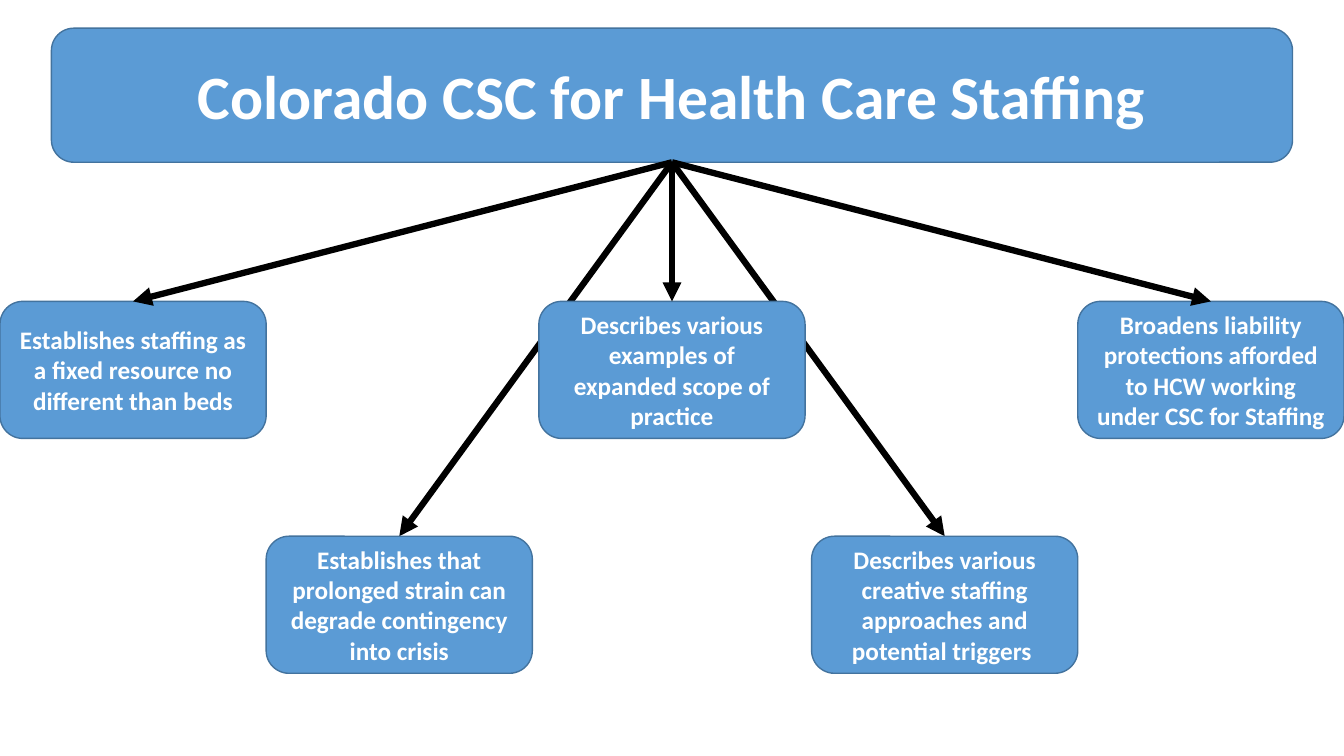
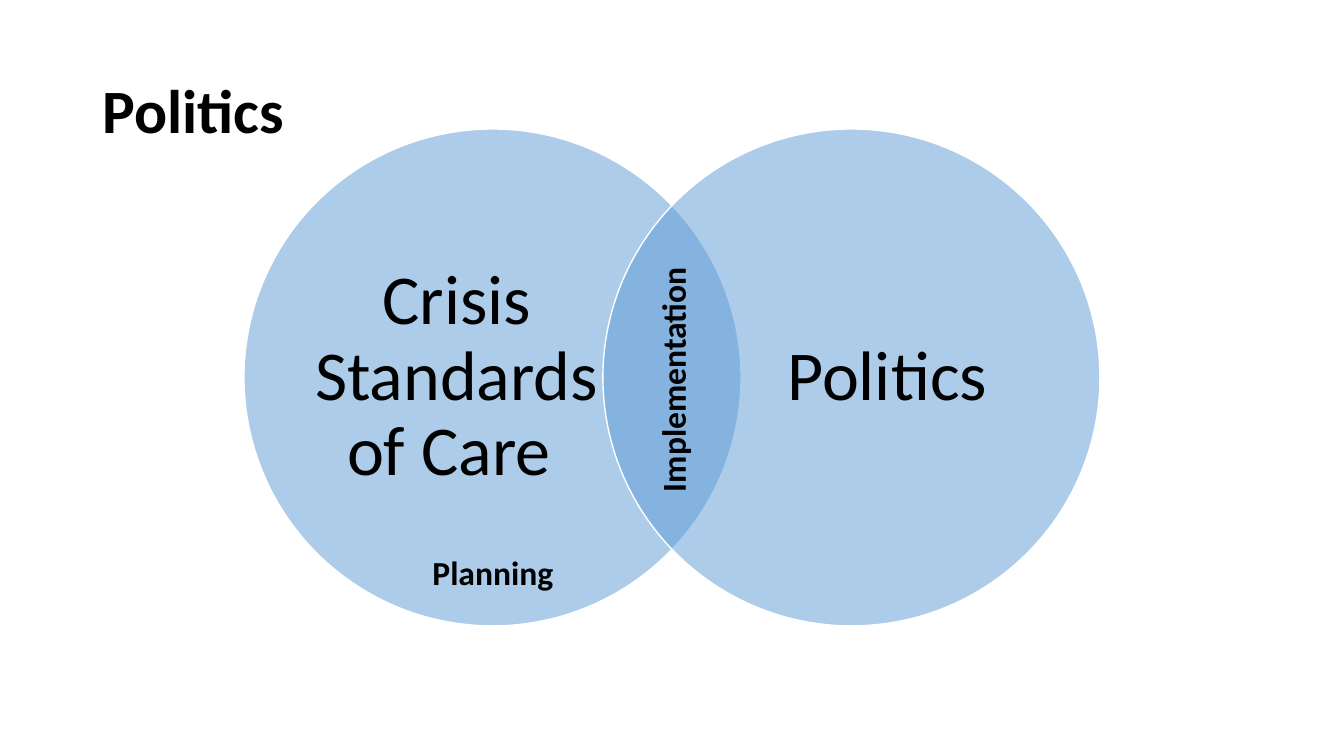
from lxml import etree
from pptx import Presentation
from pptx import util as u
from pptx.dml.color import RGBColor
from pptx.enum import shapes, text
from pptx.oxml.ns import qn

WIDTH, HEIGHT = 13.33, 7.5
FONT = "Calibri"
COLORS = {"blue": "5B9BD5", "edge": "43739E", "white": "FFFFFF", "black": "000000"}
CENTER, LEFT = text.PP_ALIGN.CENTER, text.PP_ALIGN.LEFT

BANNER = "Colorado CSC for Health Care Staffing"
# Left to right, with the row each box stands in
POINTS = [
    ("Establishes staffing as a fixed resource no different than beds", 0),
    ("Establishes that prolonged strain can degrade contingency into crisis", 1),
    ("Describes various examples of expanded scope of practice", 0),
    ("Describes various creative staffing approaches and potential triggers ", 1),
    ("Broadens liability protections afforded to HCW working under CSC for Staffing", 0),
]
BANNER_AREA = (0.51, 0.28, WIDTH - 2 * 0.51, 1.33)
BOX_WIDTH, BOX_HEIGHT = 2.64, 1.36
ROW_TOPS = (2.99, 5.32)

TITLE = "Politics"
CIRCLE_LABELS = ["Crisis Standards of Care ", "Politics"]
DIAMETER, CIRCLE_TOP, CIRCLE_MARGIN = 4.93, 1.28, 2.42
LABEL_WIDTH, LABEL_HEIGHT, LABEL_INSET = 2.84, 3.77, 0.69
TAGS = [  # text, area, rotation
    ("Planning", (4.19, 5.43, 1.41, 0.5), 0),
    ("Implementation", (5.44, 3.5, 2.46, 0.5), 270),
]


def rgb(name):
    return RGBColor.from_string(COLORS[name])


def inches(area):
    return [u.Inches(value) for value in area]


def write(shape, words, size, color="black", bold=True, align=CENTER, spacing=1.0,
          wrap=True, anchor=text.MSO_ANCHOR.MIDDLE, **margins):
    frame = shape.text_frame
    settings = {"word_wrap": wrap, "vertical_anchor": anchor, **margins}
    for name, value in settings.items():
        setattr(frame, name, value)
    para = frame.paragraphs[0]
    para.alignment, para.line_spacing = align, spacing
    span = para.add_run()
    span.text = words
    for name, value in {"name": FONT, "size": u.Pt(size), "bold": bold}.items():
        setattr(span.font, name, value)
    span.font.color.rgb = rgb(color)


def add_figure(page, kind, area, edge, opacity=None):
    shape = page.shapes.add_shape(kind, *inches(area))
    shape.shadow.inherit = False
    shape.fill.solid()
    shape.fill.fore_color.rgb = rgb("blue")
    shape.line.color.rgb = rgb(edge)
    shape.line.width = u.Pt(1)
    if opacity is not None:
        color = shape.fill._xPr.find(qn("a:solidFill"))[0]
        etree.SubElement(color, qn("a:alpha"), val=str(opacity * 1000))
    return shape


def add_rounded_box(page, area, words, size):
    box = add_figure(page, shapes.MSO_SHAPE.ROUNDED_RECTANGLE, area, "edge")
    write(box, words, size, "white")
    return box


def add_arrow(page, source, target):
    """Arrow from the bottom of source to the top of target."""
    arrow = page.shapes.add_connector(shapes.MSO_CONNECTOR.STRAIGHT, 0, 0, 0, 0)
    arrow.begin_connect(source, 2)
    arrow.end_connect(target, 0)
    arrow.line.color.rgb = rgb("black")
    arrow.line.width = u.Pt(4.5)
    etree.SubElement(arrow.line._get_or_add_ln(), qn("a:tailEnd"), type="triangle")
    etree.SubElement(arrow._element.spPr, qn("a:effectLst"))
    return arrow


def build_staffing(page):
    banner = add_rounded_box(page, BANNER_AREA, BANNER, 44)
    # Outer pairs abut from each edge; the last box is centred between them
    lefts = (0, BOX_WIDTH, (WIDTH - BOX_WIDTH) / 2, WIDTH - 2 * BOX_WIDTH, WIDTH - BOX_WIDTH)
    for left, (words, row) in zip(lefts, POINTS):
        box = add_rounded_box(page, (left, ROW_TOPS[row], BOX_WIDTH, BOX_HEIGHT), words, 18)
        arrow = add_arrow(page, banner, box)
        if row == 1:  # long arrows pass behind the boxes
            page.shapes._spTree.insert(2, arrow._element)


def build_politics(page):
    title = page.shapes.add_textbox(*inches((0.92, 0.4, 11.5, 1.45)))
    write(title, TITLE, 44, align=LEFT, spacing=0.9)

    no_margins = {f"margin_{side}": 0 for side in ("left", "top", "right", "bottom")}
    circle_lefts = (CIRCLE_MARGIN, WIDTH - CIRCLE_MARGIN - DIAMETER)
    label_margin = CIRCLE_MARGIN + LABEL_INSET
    label_lefts = (label_margin, WIDTH - label_margin - LABEL_WIDTH)
    label_top = CIRCLE_TOP + (DIAMETER - LABEL_HEIGHT) / 2
    for words, circle_left, label_left in zip(CIRCLE_LABELS, circle_lefts, label_lefts):
        add_figure(page, shapes.MSO_SHAPE.OVAL,
                   (circle_left, CIRCLE_TOP, DIAMETER, DIAMETER), "white", opacity=50)
        label = page.shapes.add_textbox(
            *inches((label_left, label_top, LABEL_WIDTH, LABEL_HEIGHT)))
        write(label, words, 50, bold=False, spacing=0.9, **no_margins)

    for words, area, rotation in TAGS:
        tag = page.shapes.add_textbox(*inches(area))
        tag.rotation = rotation
        write(tag, words, 24, align=LEFT, wrap=False, anchor=text.MSO_ANCHOR.TOP,
              auto_size=text.MSO_AUTO_SIZE.SHAPE_TO_FIT_TEXT)


def main():
    deck = Presentation()
    deck.slide_width, deck.slide_height = inches((WIDTH, HEIGHT))
    for build in (build_staffing, build_politics):
        build(deck.slides.add_slide(deck.slide_layouts[6]))
    deck.save("out.pptx")


if __name__ == "__main__":
    main()
